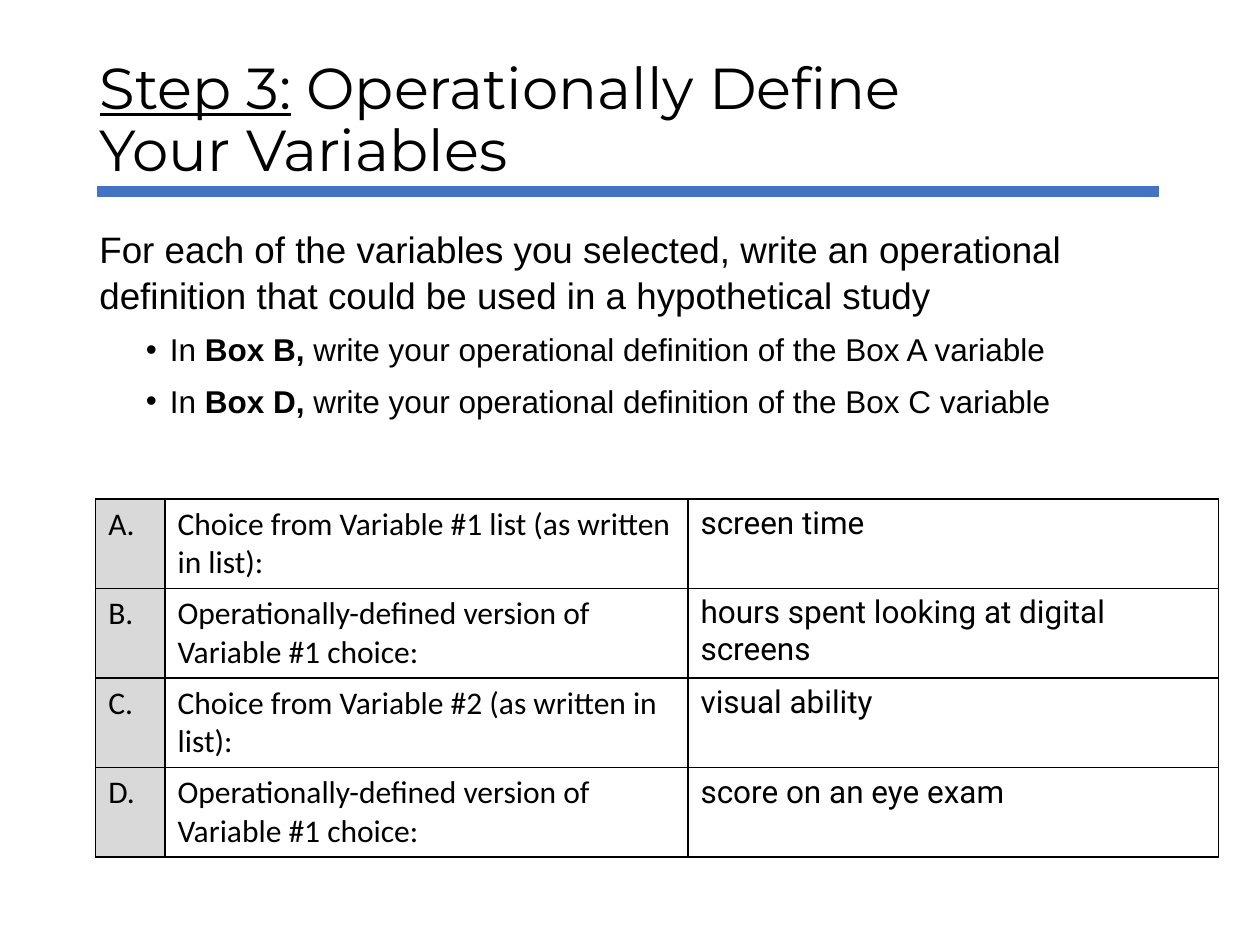
import pptx
import pptx.dml.color
import pptx.enum.shapes
import pptx.enum.text
import pptx.oxml
import pptx.oxml.ns
import pptx.util
from pptx.util import Inches, Pt

BLACK, BLUE, GREY = "000000", "4472C4", "D9D9D9"
TITLE = [("Step 3:", True), (" Operationally Define ", False)]
TITLE_END = "Your Variables"
INTRO = ("For each of the variables you selected, write an operational "
         "definition that could be used in a hypothetical study")
STEPS = [
    ("In ", "Box B, ", "write your operational definition of the Box A variable"),
    ("In ", "Box D, ", "write your operational definition of the Box C variable"),
]
ROWS = [
    ("A.", "Choice from Variable #1 list (as written in list):", "screen time"),
    ("B.", "Operationally-defined version of Variable #1 choice:",
     "hours spent looking at digital screens"),
    ("C.", "Choice from Variable #2 (as written in list):", "visual ability"),
    ("D.", "Operationally-defined version of Variable #1 choice:",
     "score on an eye exam"),
]
COLS = [(0.55, "Calibri"), (4.15, "Calibri"), (4.21, "Roboto")]
ROW_H = 0.41


def color(code):
    return pptx.dml.color.RGBColor.from_string(code)


def add_run(para, text, font, size, bold=False, line=False):
    run = para.add_run()
    run.text = text
    run.font.name, run.font.size = font, Pt(size)
    run.font.bold, run.font.underline = bold, line
    run.font.color.rgb = color(BLACK)


def space(para, before, after):
    para.space_before, para.space_after = Pt(before), Pt(after)
    para.line_spacing = 1.05


def add_xml(parent, body):
    """Append one DrawingML element given without its namespace."""
    tag, rest = body[1:].split(" ", 1)
    ns = pptx.oxml.ns.nsdecls("a")
    parent.append(pptx.oxml.parse_xml(f"<a:{tag} {ns} {rest}"))


def add_title(slide):
    title = slide.shapes.title
    title.left, title.top = Inches(0.69), Inches(0.24)
    title.width, title.height = Inches(8.62), Inches(1.45)
    frame = title.text_frame
    frame.word_wrap = True
    frame.auto_size = pptx.enum.text.MSO_AUTO_SIZE.NONE
    frame.vertical_anchor = pptx.enum.text.MSO_ANCHOR.MIDDLE
    para = frame.paragraphs[0]
    para.alignment = pptx.enum.text.PP_ALIGN.LEFT
    para.line_spacing = 0.9
    for text, line in TITLE:
        add_run(para, text, "Montserrat", 33, line=line)
    para.add_line_break()
    add_run(para, TITLE_END, "Montserrat", 33)


def add_body(slide):
    box = slide.shapes.add_textbox(
        Inches(0.69), Inches(1.73), Inches(8.62), Inches(2.1))
    frame = box.text_frame
    frame.word_wrap = True
    para = frame.paragraphs[0]
    space(para, 7.5, 3)
    add_run(para, INTRO, "Arial", 21)
    for lead, name, rest in STEPS:
        para = frame.add_paragraph()
        para.level = 1
        space(para, 3.8, 3)
        props = para._p.get_or_add_pPr()
        props.set("marL", str(Inches(0.56)))
        props.set("indent", str(Inches(-0.19)))
        add_xml(props, '<buFont typeface="Arial"/>')
        add_xml(props, '<buChar char="•"/>')
        add_run(para, lead, "Arial", 18)
        add_run(para, name, "Arial", 18, bold=True)
        add_run(para, rest, "Arial", 18)


def add_grid(slide):
    width = sum(w for w, _ in COLS)
    table = slide.shapes.add_table(
        len(ROWS), len(COLS), Inches(0.76), Inches(3.96),
        Inches(width), Inches(ROW_H * len(ROWS))).table
    table.first_row = table.horz_banding = False
    for col, (w, _) in zip(table.columns, COLS):
        col.width = Inches(w)
    for r, row in enumerate(ROWS):
        for c, text in enumerate(row):
            cell = table.cell(r, c)
            props = cell._tc.get_or_add_tcPr()
            for side in "LRTB":
                add_xml(props, f'<ln{side} w="{Pt(1)}"><a:solidFill><a:srgbClr '
                               f'val="{BLACK}"/></a:solidFill></a:ln{side}>')
            if c == 0:
                cell.fill.solid()
                cell.fill.fore_color.rgb = color(GREY)
            else:
                cell.fill.background()
            add_run(cell.text_frame.paragraphs[0], text, COLS[c][1], 18)


def add_rule(slide):
    rule = slide.shapes.add_connector(
        pptx.enum.shapes.MSO_CONNECTOR.STRAIGHT,
        Inches(0.77), Inches(1.52), Inches(9.2), Inches(1.52))
    rule.line.color.rgb = color(BLUE)
    rule.line.width = Pt(6)
    add_xml(rule._element.spPr, "<effectLst />")


def main():
    deck = pptx.Presentation()
    deck.slide_width, deck.slide_height = Inches(10), Inches(7.5)
    slide = deck.slides.add_slide(deck.slide_layouts[5])
    add_title(slide)
    add_grid(slide)
    add_body(slide)
    add_rule(slide)
    deck.save("out.pptx")


if __name__ == "__main__":
    main()
